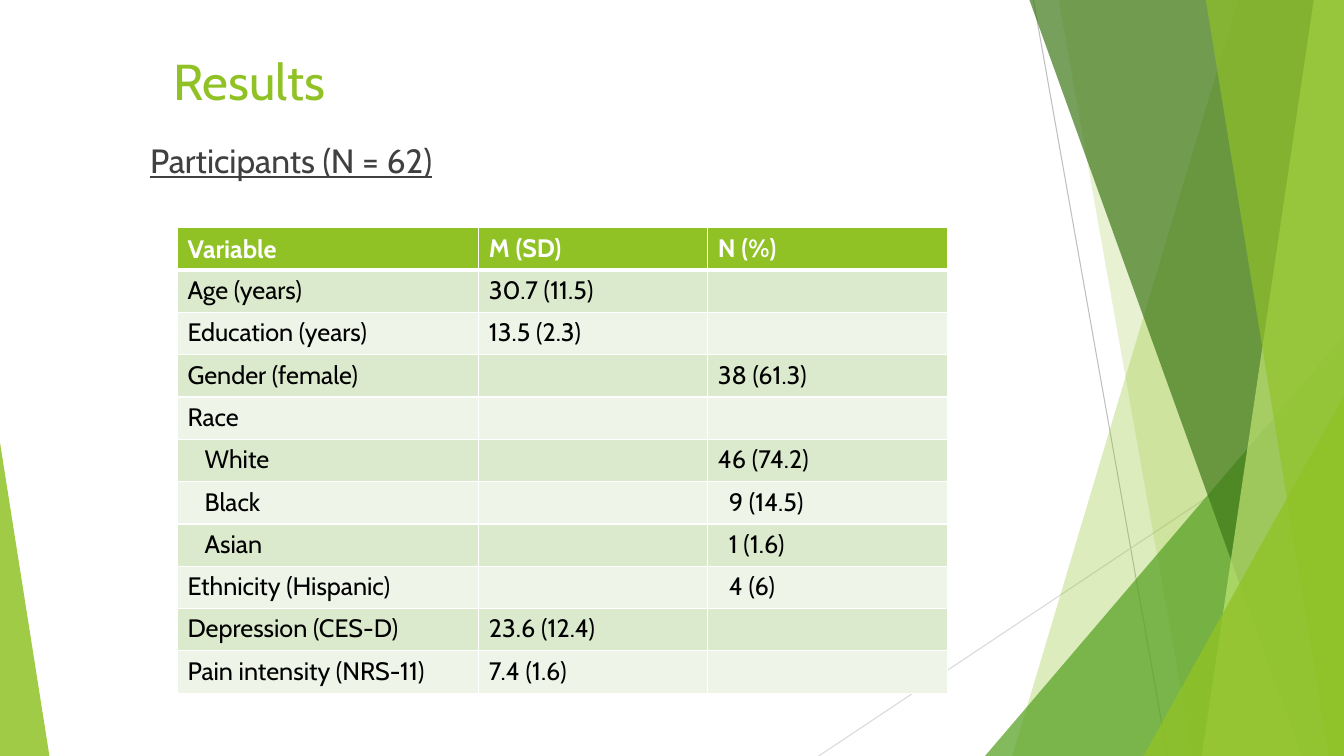
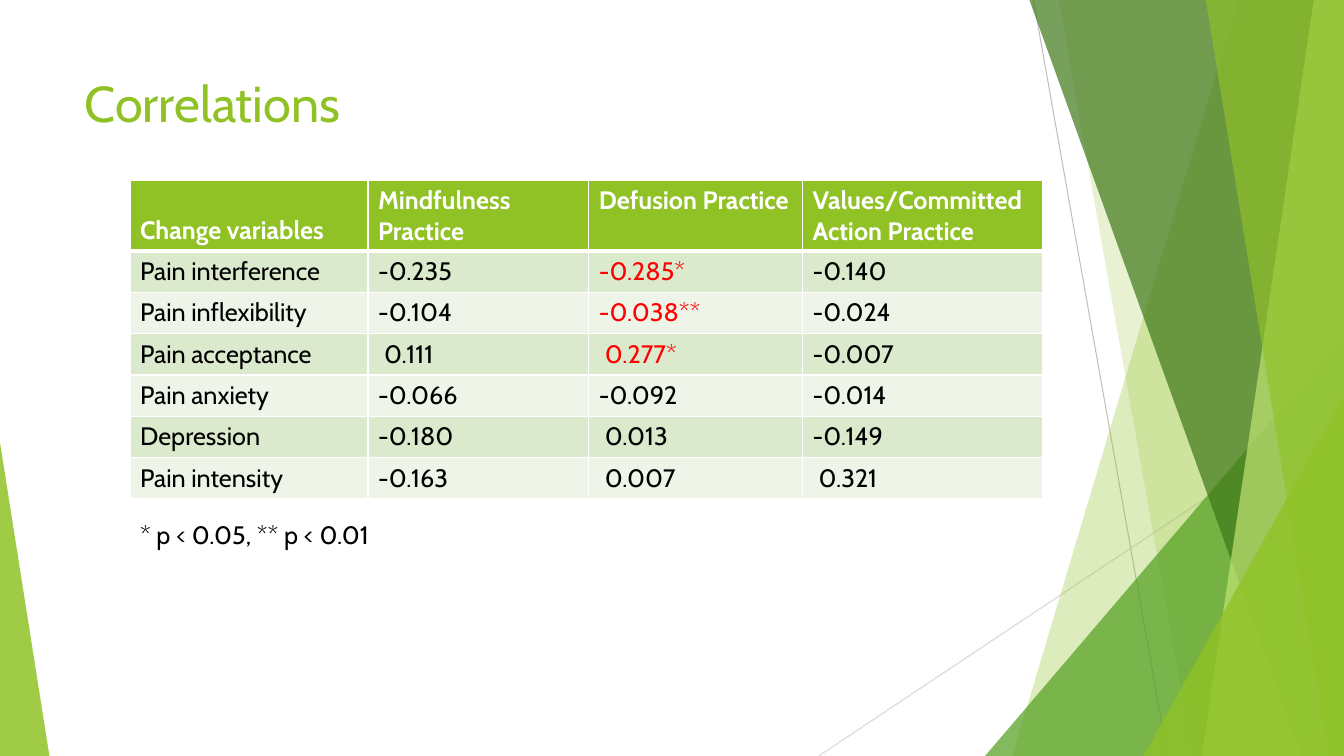
from lxml.etree import SubElement
from pptx import Presentation
from pptx.dml.color import RGBColor
from pptx.enum.shapes import MSO_CONNECTOR, MSO_SHAPE
from pptx.enum.text import MSO_ANCHOR, MSO_AUTO_SIZE, PP_ALIGN
from pptx.oxml.ns import qn
from pptx.util import Inches, Pt

# Content
PARTICIPANTS = [
    ("Variable", "M (SD)", "N (%)"),
    ("Age (years)", "30.7 (11.5)", ""),
    ("Education (years)", "13.5 (2.3)", ""),
    ("Gender (female)", "", "38 (61.3)"),
    ("Race", "", ""),
    ("White", "", "46 (74.2)"),
    ("Black", "", "9 (14.5)"),
    ("Asian", "", "1 (1.6)"),
    ("Ethnicity (Hispanic)", "", "4 (6)"),
    ("Depression (CES-D)", "23.6 (12.4)", ""),
    ("Pain intensity (NRS-11)", "7.4 (1.6)", ""),
]
CORRELATIONS = [
    ("Change variables", "Mindfulness Practice", "Defusion Practice",
     "Values/Committed Action Practice"),
    ("Pain interference", "-0.235", "-0.285*", "-0.140"),
    ("Pain inflexibility", "-0.104", "-0.038**", "-0.024"),
    ("Pain acceptance", "0.111", "0.277*", "-0.007"),
    ("Pain anxiety", "-0.066", "-0.092", "-0.014"),
    ("Depression", "-0.180", "0.013", "-0.149"),
    ("Pain intensity", "-0.163", "0.007", "0.321"),
]
# Extra left indent in inches: sub-groups, one-digit counts, unsigned values
PARTICIPANT_INDENTS = {"White": 0.17, "Black": 0.17, "Asian": 0.17,
                       "9 (14.5)": 0.11, "1 (1.6)": 0.11, "4 (6)": 0.11}
CORRELATION_INDENTS = {v: 0.06 for row in CORRELATIONS[1:]
                       for v in row[1:] if not v.startswith("-")}

# Shared look
W, H = 13.33, 7.5
FONT = "Cabin"
C = {"green": "90C226", "mid": "54A021", "dark": "3F7819", "lime": "C0E474",
     "band": "DBE9CD", "pale": "EEF4E8", "grey": "404040", "line1": "BFBFBF",
     "line2": "D9D9D9", "white": "FFFFFF", "black": "000000", "red": "FF0000"}
TITLE = {"size": Pt(36), "color": "green"}
BODY = {"size": Pt(18), "color": "black"}

LINES = [((10.25, 0), (11.58, H), "line1"), ((W, 4.03), (8.12, H), "line2")]
# Bands reach the right edge: x at the top, x at the bottom, colour, opacity
# Triangles stand on the bottom edge: left, top, width, apex, colour, opacity
DECOR = [
    ("band", 12.28, 10.04, "green", 30),
    ("band", 10.5, 11.83, "green", 20),
    ("triangle", 9.77, 3.33, W - 9.77, 1, "mid", 72),
    ("band", 10.21, 12.91, "dark", 70),
    ("band", 13.03, 11.92, "lime", 70),
    ("band", 11.96, 13.18, "green", 65),
    ("triangle", 11.34, 3.93, W - 11.34, 1, "green", 80),
    ("triangle", 0, 4.39, 0.49, 0, "green", 85),
]


def rgb(name):
    return RGBColor.from_string(C[name])


def write(tf, text, style):
    """Put one formatted line of text in a frame."""
    p = tf.paragraphs[0]
    p.alignment = PP_ALIGN.LEFT
    r = p.add_run()
    r.text = text
    r.font.name = FONT
    for key, value in style.items():
        if key == "color":
            r.font.color.rgb = rgb(value)
        else:
            setattr(r.font, key, value)


def paint(sp, color, opacity):
    sp.shadow.inherit = False
    sp.fill.solid()
    sp.fill.fore_color.rgb = rgb(color)
    sp.line.fill.background()
    clr = sp._element.spPr.find(qn("a:solidFill"))[0]
    SubElement(clr, qn("a:alpha")).set("val", str(opacity * 1000))


def decorate(layout, s):
    """Draw the side artwork on a slide, then hand it to the layout."""
    for ph in list(layout.placeholders)[1:]:
        ph._element.getparent().remove(ph._element)
    parts = []
    for start, end, color in LINES:
        sp = s.shapes.add_connector(MSO_CONNECTOR.STRAIGHT,
                                    *map(Inches, start + end))
        sp.line.color.rgb = rgb(color)
        sp.line.width = Pt(0.75)
        SubElement(sp._element.spPr, qn("a:effectLst"))
        parts.append(sp)
    for kind, *geo, color, opacity in DECOR:
        if kind == "band":
            top, bottom = map(Inches, geo)
            fb = s.shapes.build_freeform(top, 0)
            fb.add_line_segments([(Inches(W), 0), (Inches(W), Inches(H)),
                                  (bottom, Inches(H))], close=True)
            sp = fb.convert_to_shape()
        else:
            x, y, w, apex = geo
            sp = s.shapes.add_shape(MSO_SHAPE.ISOSCELES_TRIANGLE,
                                    *map(Inches, (x, y, w, H - y)))
            sp.adjustments[0] = apex
        paint(sp, color, opacity)
        parts.append(sp)
    for sp in parts:
        layout.shapes._spTree.append(sp._element)


def set_title(s, text, box):
    sp = s.shapes.title
    sp.left, sp.top, sp.width, sp.height = map(Inches, box)
    tf = sp.text_frame
    tf.vertical_anchor = MSO_ANCHOR.TOP
    tf.auto_size = MSO_AUTO_SIZE.NONE
    write(tf, text, TITLE)


def add_text(s, text, box, style):
    tf = s.shapes.add_textbox(*map(Inches, box)).text_frame
    tf.word_wrap = True
    write(tf, text, style)


def add_borders(cell, widths):
    """White cell edges; widths in points by side."""
    tcPr = cell._tc.get_or_add_tcPr()
    for side, width in widths.items():
        ln = SubElement(tcPr, qn("a:ln" + side), w=str(Pt(width)))
        fill = SubElement(ln, qn("a:solidFill"))
        SubElement(fill, qn("a:srgbClr"), val=C["white"])


def add_grid(s, rows, at, cols, head_h, row_h, indents):
    heights = [head_h] + [row_h] * (len(rows) - 1)
    tbl = s.shapes.add_table(
        len(rows), len(cols),
        *map(Inches, (*at, sum(cols), sum(heights)))).table
    tbl.horz_banding = False
    for col, w in zip(tbl.columns, cols):
        col.width = Inches(w)
    for i, (row, h) in enumerate(zip(rows, heights)):
        tbl.rows[i].height = Inches(h)
        for j, text in enumerate(row):
            cell = tbl.cell(i, j)
            add_borders(cell, {"L": 1, "R": 1, "T": 3 if i == 1 else 1,
                               "B": 3 if i == 0 else 1})
            cell.fill.solid()
            cell.fill.fore_color.rgb = rgb(
                "green" if i == 0 else "band" if i % 2 else "pale")
            if i == j == 0:
                cell.vertical_anchor = MSO_ANCHOR.BOTTOM
            if not text:
                continue
            cell.margin_left = Inches(0.1 + indents.get(text, 0))
            color = ("white" if i == 0 else
                     "red" if text.endswith("*") else "black")
            write(cell.text_frame, text,
                  {**BODY, "color": color, "bold": i == 0})


def main():
    prs = Presentation()
    prs.slide_width, prs.slide_height = Inches(W), Inches(H)
    layout = prs.slide_layouts[5]

    # Results
    s = prs.slides.add_slide(layout)
    decorate(layout, s)
    set_title(s, "Results", (1.62, 0.45, 6.94, 1.44))
    add_text(s, "Participants (N = 62)", (1.39, 1.34, 9.2, 1.03),
             {"size": Pt(24), "color": "grey", "underline": True})
    add_grid(s, PARTICIPANTS, (1.76, 2.26), (2.99, 2.27, 2.38),
             0.42, 0.42, PARTICIPANT_INDENTS)

    # Correlations
    s = prs.slides.add_slide(layout)
    set_title(s, "Correlations", (0.74, 0.67, 9.4, 1.44))
    add_text(s, "* p < 0.05, ** p < 0.01", (1.29, 5.1, 3.09, 0.4), BODY)
    add_grid(s, CORRELATIONS, (1.29, 1.79), (2.36, 2.19, 2.12, 2.38),
             0.69, 0.41, CORRELATION_INDENTS)

    prs.save("out.pptx")


if __name__ == "__main__":
    main()
